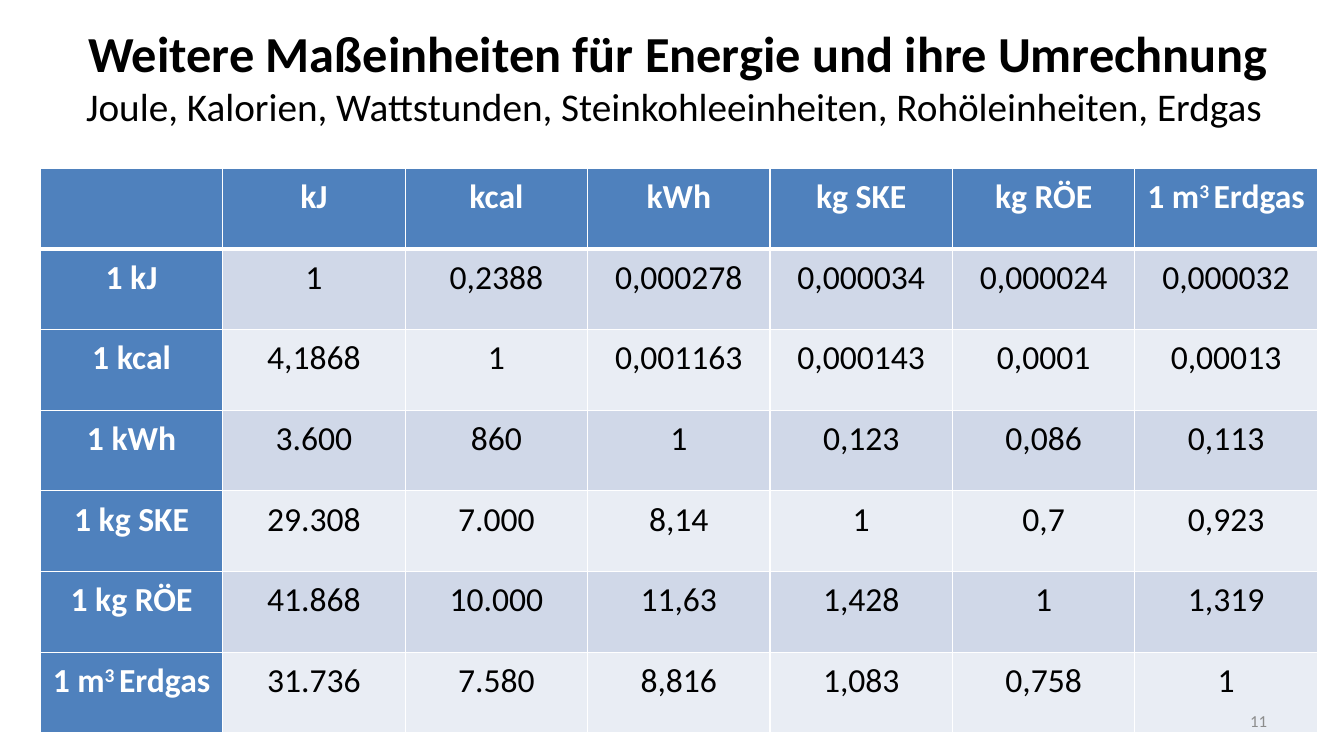
from lxml.etree import SubElement
from pptx import Presentation
from pptx.dml.color import RGBColor
from pptx.enum.text import MSO_ANCHOR as Anchor, MSO_AUTO_SIZE as AutoSize, PP_ALIGN as Align
from pptx.oxml.ns import qn
from pptx.util import Pt

FONT = "Calibri"
COLORS = {
    "text": "000000",
    "header": "4F81BD",
    "header_text": "FFFFFF",
    "band_dark": "D0D8E8",
    "band_light": "E9EDF4",
    "border": "FFFFFF",
    "number": "8C8C8C",
}
COLUMN_WIDTH, ROW_HEIGHT = 130.32, 57.6

# A unit is a list of (text, is superscript) pieces
CUBIC_METRE = [("1 m", False), ("3 ", True), ("Erdgas", False)]
UNITS = ["kJ", "kcal", "kWh", "kg SKE", "kg RÖE"]
FACTORS = [
    ["1", "0,2388", "0,000278", "0,000034", "0,000024", "0,000032"],
    ["4,1868", "1", "0,001163", "0,000143", "0,0001", "0,00013"],
    ["3.600", "860", "1", "0,123", "0,086", "0,113"],
    ["29.308", "7.000", "8,14", "1", "0,7", "0,923"],
    ["41.868", "10.000", "11,63", "1,428", "1", "1,319"],
    ["31.736", "7.580", "8,816", "1,083", "0,758", "1"],
]


def color(name):
    return RGBColor.from_string(COLORS[name])


def add_span(para, text, size, color_name, bold=False, superscript=False):
    span = para.add_run()
    span.text = text
    span.font.name = FONT
    span.font.size = Pt(size)
    span.font.bold = bold
    span.font.color.rgb = color(color_name)
    if superscript:
        span.font._element.set("baseline", "30000")


def place(shape, left, top, width, height):
    shape.left, shape.top = Pt(left), Pt(top)
    shape.width, shape.height = Pt(width), Pt(height)


def add_title(page, heading, subheading):
    title = page.shapes.title
    place(title, -2.16, -13.68, 973.44, 136.08)
    frame = title.text_frame
    frame.auto_size = AutoSize.NONE
    frame.vertical_anchor = Anchor.MIDDLE
    para = frame.paragraphs[0]
    para.alignment = Align.CENTER
    add_span(para, heading, 36, "text", bold=True)
    para.add_line_break()
    add_span(para, subheading, 28, "text")


def set_borders(cell, top, bottom):
    properties = cell._tc.get_or_add_tcPr()
    sides = [("a:lnL", 1), ("a:lnR", 1), ("a:lnT", top), ("a:lnB", bottom)]
    for position, (tag, width) in enumerate(sides):
        line = SubElement(properties, qn(tag), w=str(Pt(width)))
        fill = SubElement(line, qn("a:solidFill"))
        SubElement(fill, qn("a:srgbClr"), val=COLORS["border"])
        properties.insert(position, line)  # borders come before the fill


def fill_cell(cell, pieces, fill_name, is_header):
    cell.fill.solid()
    cell.fill.fore_color.rgb = color(fill_name)
    cell.vertical_anchor = Anchor.MIDDLE
    cell.margin_left = cell.margin_right = Pt(5)
    cell.margin_top = cell.margin_bottom = Pt(0)
    para = cell.text_frame.paragraphs[0]
    para.alignment = Align.CENTER
    para.line_spacing = Pt(13)
    para.space_after = Pt(6)
    text_color = "header_text" if is_header else "text"
    for text, superscript in pieces:
        add_span(para, text, 24, text_color, is_header, superscript)


def add_conversion_table(page):
    column_units = [[(unit, False)] for unit in UNITS] + [CUBIC_METRE]
    row_units = [[("1 " + unit, False)] for unit in UNITS] + [CUBIC_METRE]
    rows = [[[]] + column_units]
    for unit, factors in zip(row_units, FACTORS):
        rows.append([unit] + [[(factor, False)] for factor in factors])

    count = len(rows)
    table = page.shapes.add_table(
        count, count, Pt(28.8), Pt(120.24),
        Pt(COLUMN_WIDTH * count), Pt(ROW_HEIGHT * count)).table
    table.first_col = True
    for column in table.columns:
        column.width = Pt(COLUMN_WIDTH)
    for r, row in enumerate(rows):
        table.rows[r].height = Pt(ROW_HEIGHT)
        band = "band_dark" if r % 2 else "band_light"
        for c, pieces in enumerate(row):
            cell = table.cell(r, c)
            is_header = r == 0 or c == 0
            fill_cell(cell, pieces, "header" if is_header else band, is_header)
            # The heavy rule sits between the header row and the first data row
            set_borders(cell, top=3 if r == 1 else 1, bottom=3 if r == 0 else 1)


def add_page_number(page, number):
    box = page.shapes.add_textbox(Pt(688.32), Pt(500.4), Pt(223.92), Pt(28.8))
    frame = box.text_frame
    frame.word_wrap = True
    frame.vertical_anchor = Anchor.MIDDLE
    para = frame.paragraphs[0]
    para.alignment = Align.RIGHT
    add_span(para, number, 12, "number")


def main():
    deck = Presentation()
    deck.slide_width, deck.slide_height = Pt(960), Pt(540)
    page = deck.slides.add_slide(deck.slide_layouts.get_by_name("Title Only"))

    add_title(page, "Weitere Maßeinheiten für Energie und ihre Umrechnung",
              "Joule, Kalorien, Wattstunden, Steinkohleeinheiten, Rohöleinheiten, Erdgas ")
    add_conversion_table(page)
    add_page_number(page, "11")

    deck.save("out.pptx")


if __name__ == "__main__":
    main()
